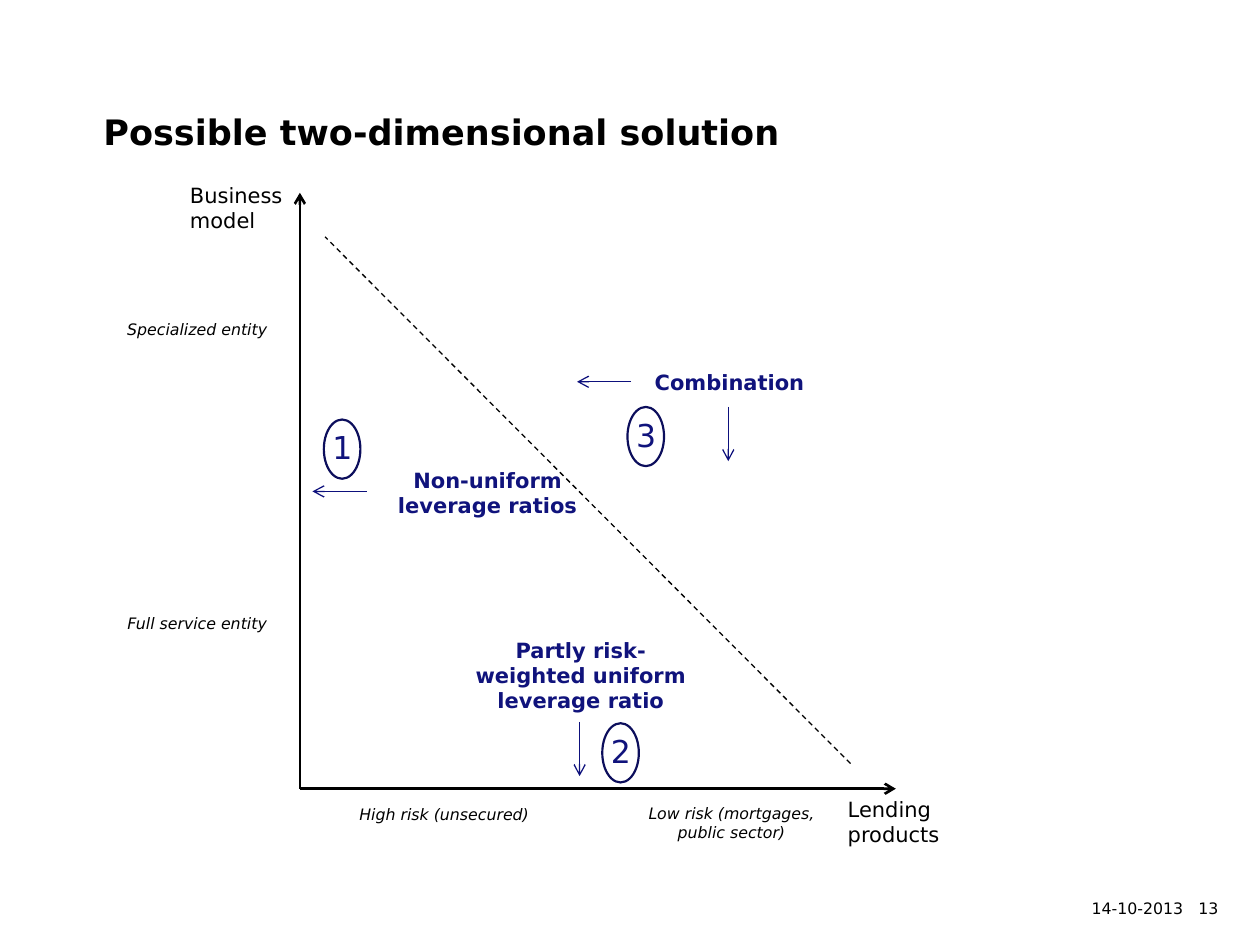
from lxml import etree
from pptx import Presentation
from pptx.dml.color import RGBColor
from pptx.enum.dml import MSO_LINE
from pptx.enum.shapes import MSO_CONNECTOR, MSO_SHAPE
from pptx.enum.text import MSO_ANCHOR, PP_ALIGN
from pptx.oxml.ns import qn
from pptx.util import Inches, Pt

LEFT, CENTER, RIGHT = PP_ALIGN.LEFT, PP_ALIGN.CENTER, PP_ALIGN.RIGHT
TOP, MIDDLE = MSO_ANCHOR.TOP, MSO_ANCHOR.MIDDLE
STRAIGHT, OVAL, DASH = MSO_CONNECTOR.STRAIGHT, MSO_SHAPE.OVAL, MSO_LINE.DASH

FONT = "DejaVu Sans"
BLACK, NAVY, ARROW_BLUE, RING_BLUE = "000000", "10137C", "0D107C", "0C0E5C"

# The slide is a grid of 100 columns by 75 rows; all lengths are in cells.
COLS, ROWS = 100, 75
CELL = Inches(10) / COLS
ARROW_LENGTH = 4.3
BADGE_W, BADGE_H = 2.9, 4.7


def color(value):
    return RGBColor.from_string(value)


def cells(*values):
    return [round(v * CELL) for v in values]


def write(tf, text, size, rgb=BLACK, bold=False, italic=False,
          align=LEFT, anchor=TOP):
    tf.word_wrap = True
    tf.vertical_anchor = anchor
    p = tf.paragraphs[0]
    p.alignment = align
    r = p.add_run()
    r.text = text
    r.font.name, r.font.size = FONT, Pt(size)
    r.font.bold, r.font.italic = bold, italic
    r.font.color.rgb = color(rgb)


def add_label(slide, box, text, size, **style):
    tf = slide.shapes.add_textbox(*cells(*box)).text_frame
    write(tf, text, size, **style)
    return tf


def add_line(slide, start, end, rgb, width, dash=None, arrow=True):
    line = slide.shapes.add_connector(STRAIGHT, *cells(*start, *end))
    line.line.color.rgb = color(rgb)
    line.line.width = Pt(width)
    if dash:
        line.line.dash_style = dash
    if arrow:
        ln = line.line._get_or_add_ln()
        etree.SubElement(ln, qn("a:tailEnd"), type="arrow")
    etree.SubElement(line._element.spPr, qn("a:effectLst"))


def add_title(slide, box, text):
    title = slide.shapes.title
    title.left, title.top, title.width, title.height = cells(*box)
    write(title.text_frame, text, 20, bold=True, anchor=MIDDLE)


def add_footer(slide, box, date, number):
    """Date and page number, both flush right in their part of the box."""
    x, y, w, h = box
    number_w = 2.5
    date_w = w - number_w - 0.3
    for left, width, text in ((x, date_w, date),
                              (x + w - number_w, number_w, number)):
        tf = add_label(slide, (left, y, width, h), text, 9,
                       align=RIGHT, anchor=MIDDLE)
        tf.margin_left = tf.margin_right = tf.margin_top = tf.margin_bottom = 0


def add_plot(slide, box):
    """Both axes, their names and ranges, and the dashed diagonal."""
    x, y, w, h = box
    bottom = y + h
    add_line(slide, (x, bottom), (x, y), BLACK, 1.5)
    add_line(slide, (x, bottom), (x + w, bottom), BLACK, 1.5)
    add_line(slide, (x + w - 3.6, bottom - 2), (x + 2, y + 3.5),
             BLACK, 0.75, dash=DASH, arrow=False)

    for dx, dy, text in ((-9.7, -1.3, "Business model"),
                         (42.5, h + 0.1, "Lending products")):
        add_label(slide, (x + dx, y + dy, 11.3, 5), text, 12)

    ranges = (
        (-16.3, 9.6, 2.5, "Specialized entity"),
        (-16.3, 32.9, 2.5, "Full service entity"),
        (3.3, h + 0.8, 2.5, "High risk (unsecured)"),
        (26.1, h + 0.7, 4, "Low risk (mortgages, public sector)"),
    )
    for dx, dy, height, text in ranges:
        add_label(slide, (x + dx, y + dy, 16.3, height), text, 9,
                  italic=True, align=CENTER)


def add_badge(slide, x, y, number):
    add_label(slide, (x - 0.3, y + 0.2, 2.6, 4), number, 18, rgb=NAVY)
    ring = slide.shapes.add_shape(OVAL, *cells(x, y, BADGE_W, BADGE_H))
    ring.shadow.inherit = False
    ring.fill.background()
    ring.line.color.rgb = color(RING_BLUE)
    ring.line.width = Pt(1.25)


def add_option(slide, box, text, number, badge, left=None, down=None):
    """Option text; badge and arrow starts are offsets from the box corner."""
    x, y = box[:2]
    add_label(slide, box, text, 12, rgb=NAVY, bold=True, align=CENTER)
    for start, dx, dy in ((left, -ARROW_LENGTH, 0), (down, 0, ARROW_LENGTH)):
        if start:
            x0, y0 = x + start[0], y + start[1]
            add_line(slide, (x0, y0), (x0 + dx, y0 + dy), ARROW_BLUE, 0.75)
    add_badge(slide, x + badge[0], y + badge[1], number)


def main():
    prs = Presentation()
    prs.slide_width, prs.slide_height = cells(COLS, ROWS)
    slide = prs.slides.add_slide(prs.slide_layouts[5])

    add_title(slide, (7.2, 7, 88.3, 6.9), "Possible two-dimensional solution")
    add_footer(slide, (85.2, 70.9, 11.5, 2.4), "14-10-2013", "13")
    add_plot(slide, (23.8, 15.3, 47.3, 47.3))
    add_option(slide, (29.2, 36.6, 19, 5), "Non-uniform leverage ratios", "1",
               badge=(-3.5, -3.3), left=(-0.1, 2.4))
    add_option(slide, (36.6, 50.1, 19, 7.1),
               "Partly risk-weighted uniform leverage ratio", "2",
               badge=(11.2, 7.3), down=(9.4, 7.2))
    add_option(slide, (48.4, 28.8, 19, 3), "Combination", "3",
               badge=(1.4, 3.5), left=(1.7, 1.5), down=(9.4, 3.5))
    prs.save("out.pptx")


if __name__ == "__main__":
    main()
